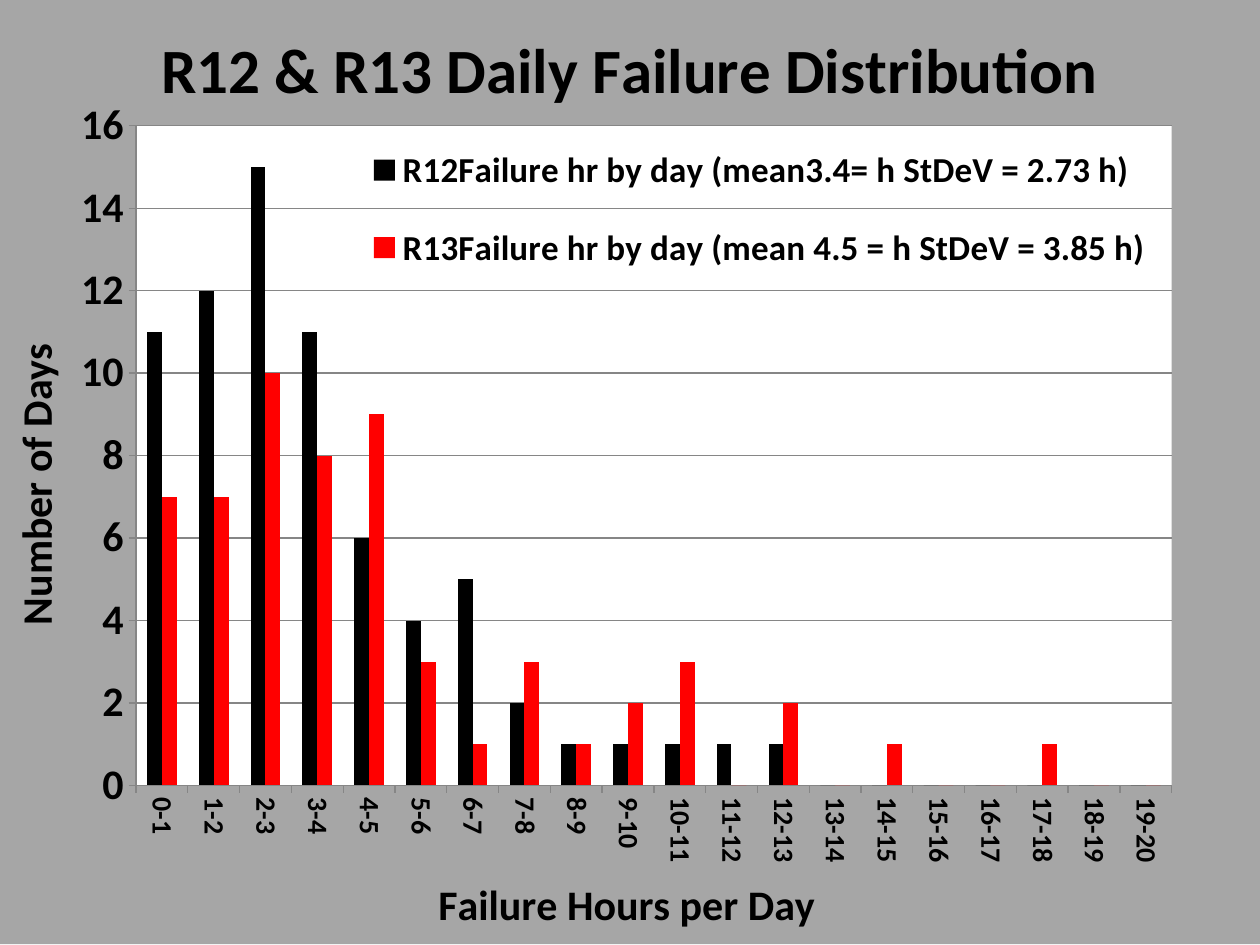
"""Build the R12 and R13 daily failure distribution slide."""
from dataclasses import dataclass

from lxml import etree
from pptx import Presentation
from pptx.chart.data import CategoryChartData
from pptx.dml.color import RGBColor
from pptx.enum.chart import XL_CHART_TYPE, XL_LEGEND_POSITION, XL_TICK_MARK
from pptx.oxml import parse_xml
from pptx.oxml.ns import nsdecls, qn
from pptx.util import Inches, Pt

CLUSTERED = XL_CHART_TYPE.COLUMN_CLUSTERED
LEGEND_RIGHT = XL_LEGEND_POSITION.RIGHT
TICK_OUTSIDE = XL_TICK_MARK.OUTSIDE

SLIDE_WIDTH = Inches(10)
SLIDE_HEIGHT = Inches(7.5)
BLACK = RGBColor(0x00, 0x00, 0x00)
RED = RGBColor(0xFF, 0x00, 0x00)
WHITE = RGBColor(0xFF, 0xFF, 0xFF)
BACKDROP_GRAY = RGBColor(0xA6, 0xA6, 0xA6)
LINE_GRAY = RGBColor(0x86, 0x86, 0x86)
FONT_NAME = "Calibri"
QUARTER_TURN = 5400000


@dataclass(frozen=True)
class FailureSeries:
    name: str
    days: tuple[int, ...]
    color: RGBColor


@dataclass(frozen=True)
class AxisStyle:
    title: str
    label_size: int


FAILURES = (
    FailureSeries(
        "R12Failure hr by day (mean3.4= h StDeV = 2.73 h)",
        (11, 12, 15, 11, 6, 4, 5, 2, 1, 1, 1, 1, 1, 0, 0, 0, 0, 0, 0, 0),
        BLACK,
    ),
    FailureSeries(
        "R13Failure hr by day (mean 4.5 = h StDeV = 3.85 h)",
        (7, 7, 10, 8, 9, 3, 1, 3, 1, 2, 3, 0, 2, 0, 1, 0, 0, 1, 0, 0),
        RED,
    ),
)
HOURS_AXIS = AxisStyle("Failure Hours per Day", 16)
DAYS_AXIS = AxisStyle("Number of Days", 24)
LAYOUTS = {
    "c:chart/c:title": {"x": Inches(1.19), "y": Inches(0.11)},
    "c:chart/c:plotArea": {
        "x": Inches(1.08), "y": Inches(1), "w": Inches(8.22), "h": Inches(5.24),
    },
    "c:chart/c:plotArea/c:catAx/c:title": {"x": Inches(3.42), "y": Inches(6.9)},
    "c:chart/c:plotArea/c:valAx/c:title": {"x": Inches(0), "y": Inches(2.67)},
    "c:chart/c:legend": {
        "x": Inches(2.88), "y": Inches(0.91), "w": Inches(6.3), "h": Inches(1.5),
    },
}
ROTATIONS = {
    "c:chart/c:plotArea/c:catAx/c:txPr/a:bodyPr": QUARTER_TURN,
    "c:chart/c:plotArea/c:valAx/c:title//a:bodyPr": -QUARTER_TURN,
}


def style_font(font, size: int, bold: bool = True) -> None:
    formats = {"name": FONT_NAME, "size": Pt(size), "bold": bold}
    for attribute, value in formats.items():
        setattr(font, attribute, value)
    font.color.rgb = BLACK


def write_title(owner, text: str, size: int) -> None:
    frame = owner.text_frame
    frame.text = text
    style_font(frame.paragraphs[0].runs[0].font, size)


def style_axis(axis, style: AxisStyle) -> None:
    axis.has_title = True
    write_title(axis.axis_title, style.title, 24)
    style_font(axis.tick_labels.font, style.label_size)
    axis.major_tick_mark = TICK_OUTSIDE
    axis.format.line.color.rgb = LINE_GRAY


def place(part, lengths: dict[str, int]) -> None:
    for previous in part.findall(qn("c:layout")):
        part.remove(previous)
    layout = parse_xml(f"<c:layout {nsdecls('c')}><c:manualLayout/></c:layout>")
    manual = layout[0]
    is_plot = part.tag == qn("c:plotArea")
    settings = {"layoutTarget": "inner"} if is_plot else {}
    settings |= {"xMode": "edge", "yMode": "edge"}
    for name, length in lengths.items():
        settings[name] = length / (SLIDE_WIDTH if name in "xw" else SLIDE_HEIGHT)
    for name, value in settings.items():
        etree.SubElement(manual, qn(f"c:{name}")).set("val", str(value))
    if is_plot:
        part.insert(0, layout)
    else:
        part.find(qn("c:overlay")).addprevious(layout)


def solid_fill(color: RGBColor):
    return parse_xml(
        f"<c:spPr {nsdecls('c', 'a')}><a:solidFill><a:srgbClr val=\"{color}\"/>"
        "</a:solidFill><a:ln><a:noFill/></a:ln></c:spPr>"
    )


def add_failure_chart(slide) -> None:
    distribution = CategoryChartData()
    distribution.categories = [f"{hour}-{hour + 1}" for hour in range(20)]
    for failure in FAILURES:
        distribution.add_series(failure.name, failure.days)
    chart = slide.shapes.add_chart(
        CLUSTERED, 0, 0, SLIDE_WIDTH, SLIDE_HEIGHT, distribution
    ).chart

    style_font(chart.font, 10, False)
    chart.has_title = True
    write_title(chart.chart_title, "R12 & R13 Daily Failure Distribution", 36)
    style_axis(chart.category_axis, HOURS_AXIS)
    style_axis(chart.value_axis, DAYS_AXIS)
    scale = {"minimum_scale": 0, "maximum_scale": 16, "major_unit": 2}
    for attribute, value in scale.items():
        setattr(chart.value_axis, attribute, value)
    chart.value_axis.major_gridlines.format.line.color.rgb = LINE_GRAY

    chart.has_legend = True
    chart.legend.position = LEGEND_RIGHT
    chart.legend.include_in_layout = False
    style_font(chart.legend.font, 20)

    bars = chart.plots[0]
    bars.gap_width, bars.overlap, bars.vary_by_categories = 150, 0, False
    for series, failure in zip(bars.series, FAILURES):
        series.format.fill.solid()
        series.format.fill.fore_color.rgb = failure.color

    space = chart.element
    for location, lengths in LAYOUTS.items():
        place(space.xpath(location)[0], lengths)
    for location, angle in ROTATIONS.items():
        body = space.xpath(location)[0]
        body.set("rot", str(angle))
        body.set("vert", "horz")
    space.xpath("c:chart/c:title/c:overlay")[0].set("val", "1")
    space.xpath("c:chart/c:plotArea")[0].append(solid_fill(WHITE))
    space.find(qn("c:chart")).addnext(solid_fill(BACKDROP_GRAY))


def main() -> None:
    deck = Presentation()
    deck.slide_width, deck.slide_height = SLIDE_WIDTH, SLIDE_HEIGHT
    slide = deck.slides.add_slide(deck.slide_layouts[6])
    add_failure_chart(slide)
    deck.save("out.pptx")


if __name__ == "__main__":
    main()
